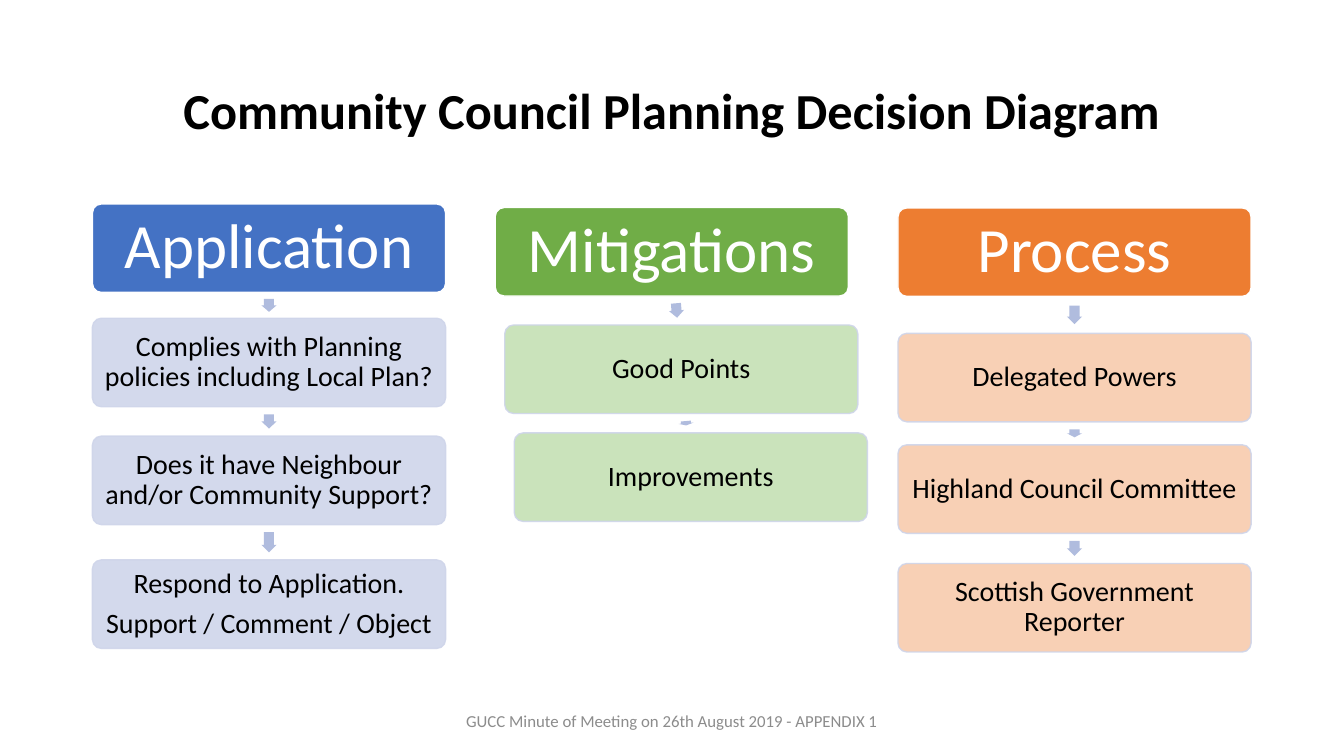
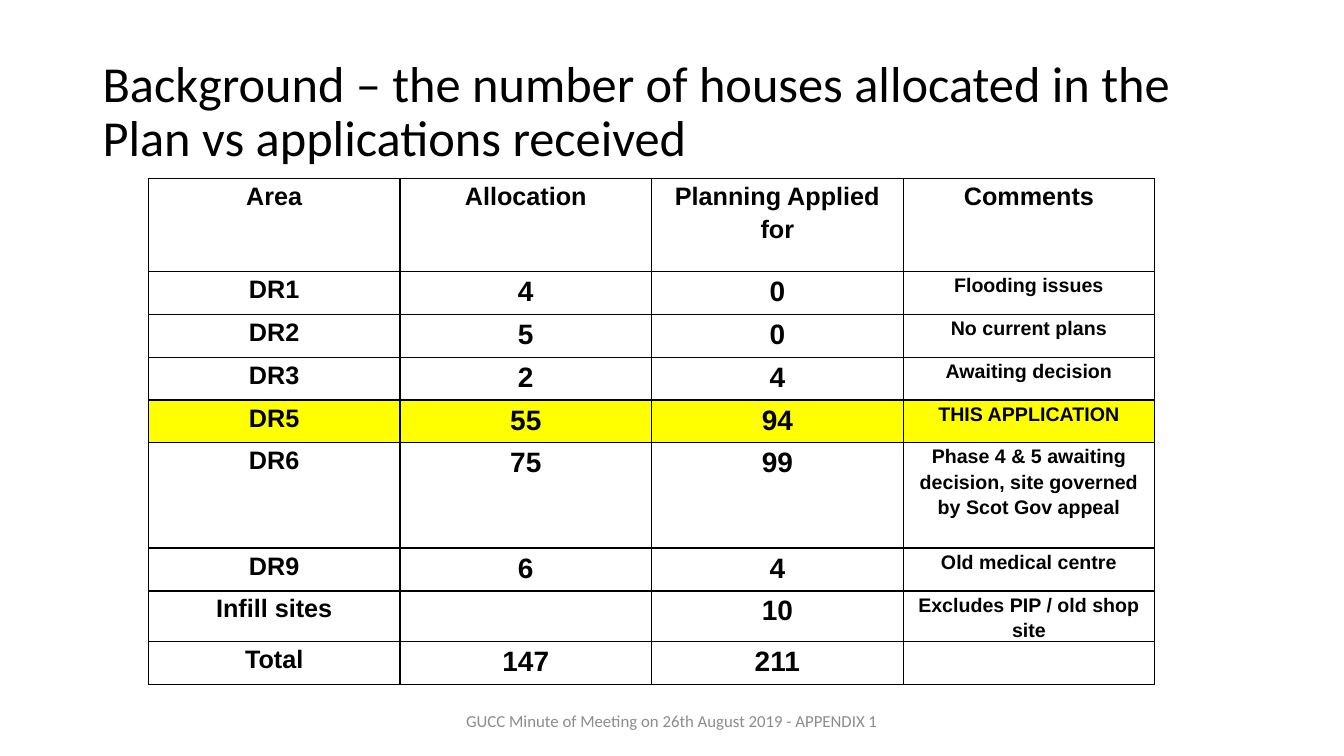
import math
from dataclasses import dataclass
from itertools import pairwise

from lxml import etree
from pptx import Presentation
from pptx import util as u
from pptx.dml import color
from pptx.enum import shapes, text
from pptx.oxml import ns


@dataclass(frozen=True)
class Theme:
    body_font: str = "Calibri"
    table_font: str = "Arial"
    ink: str = "000000"
    paper: str = "FFFFFF"
    footer_ink: str = "8C8C8C"
    arrow: str = "B0BCDE"
    step_line: str = "CFD5EA"
    highlight: str = "FFFF00"
    blue: tuple = ("4472C4", "CFD5EA")
    green: tuple = ("70AD47", "C5E0B4")
    orange: tuple = ("ED7D31", "F8CBAD")
    title_size: int = 36
    header_size: int = 45
    step_size: int = 20
    footer_size: int = 12
    table_sizes: tuple = (18, 20, 20, 14)


FOOTER = "GUCC Minute of Meeting on 26th August 2019 - APPENDIX 1"
BOX_WIDTH, BOX_HEIGHT = 8.9, 2.23
ARROW_WIDTH, ARROW_CLEARANCE = 0.38, 0.38


class Deck:
    def __init__(self, theme):
        self.theme = theme
        self.presentation = Presentation()
        self.presentation.slide_width = u.Cm(33.87)
        self.presentation.slide_height = u.Cm(19.05)
        self.slide = None

    def new_slide(self, title, bold=False, align=text.PP_ALIGN.LEFT):
        layout = self.presentation.slide_layouts.get_by_name("Title Only")
        self.slide = self.presentation.slides.add_slide(layout)
        shape = self.slide.shapes.title
        shape.left, shape.top = u.Cm(2.33), u.Cm(1.01)
        shape.width, shape.height = u.Cm(29.21), u.Cm(3.68)
        self.set_text(shape.text_frame, title, self.theme.title_size,
                      bold=bold, align=align, spacing=0.9)
        self.footer()

    def set_text(self, frame, content, size, ink=None, bold=False,
                 align=text.PP_ALIGN.CENTER, spacing=1.0):
        frame.text = content
        frame.word_wrap = True
        frame.auto_size = text.MSO_AUTO_SIZE.NONE
        frame.vertical_anchor = text.MSO_ANCHOR.MIDDLE
        self.style_text(frame, size, ink or self.theme.ink, self.theme.body_font,
                        bold, align, spacing)

    def style_text(self, frame, size, ink, font, bold, align, spacing):
        for index, paragraph in enumerate(frame.paragraphs):
            paragraph.alignment = align
            paragraph.line_spacing = spacing
            paragraph.space_before = u.Pt(0.35 * size if index else 0)
            for run in paragraph.runs:
                run.font.name = font
                run.font.size = u.Pt(size)
                run.font.bold = bold
                run.font.color.rgb = color.RGBColor.from_string(ink)

    def footer(self):
        shape = self.slide.shapes.add_textbox(
            u.Cm(11.22), u.Cm(17.66), u.Cm(11.43), u.Cm(1.01))
        self.set_text(shape.text_frame, FOOTER, self.theme.footer_size,
                      self.theme.footer_ink)

    def paint(self, fill, value):
        fill.solid()
        fill.fore_color.rgb = color.RGBColor.from_string(value)

    def box(self, left, top, content, size, fill, line, ink, inset, opacity=100):
        shape = self.slide.shapes.add_shape(
            shapes.MSO_SHAPE.ROUNDED_RECTANGLE,
            u.Cm(left), u.Cm(top), u.Cm(BOX_WIDTH), u.Cm(BOX_HEIGHT))
        shape.adjustments[0] = 0.1
        shape.shadow.inherit = False
        self.paint(shape.fill, fill)
        self.paint(shape.line.fill, line)
        shape.line.width = u.Pt(1)
        if opacity < 100:
            for tint in shape.element.spPr.iter(ns.qn("a:srgbClr")):
                etree.SubElement(tint, ns.qn("a:alpha"), val=str(opacity * 1000))
        frame = shape.text_frame
        frame.margin_left = frame.margin_right = u.Cm(inset)
        frame.margin_top = frame.margin_bottom = u.Cm(inset)
        self.set_text(frame, content, size, ink, spacing=0.9)

    def arrow(self, start, end, length):
        (start_left, start_top), (end_left, end_top) = start, end
        center_x = (start_left + end_left + BOX_WIDTH) / 2
        center_y = (start_top + end_top + BOX_HEIGHT) / 2
        shape = self.slide.shapes.add_shape(
            shapes.MSO_SHAPE.DOWN_ARROW,
            u.Cm(center_x - ARROW_WIDTH / 2), u.Cm(center_y - length / 2),
            u.Cm(ARROW_WIDTH), u.Cm(length))
        shape.adjustments[0] = 0.667
        shape.adjustments[1] = 0.5
        shape.rotation = -math.degrees(math.atan2(end_left - start_left, end_top - start_top))
        shape.shadow.inherit = False
        self.paint(shape.fill, self.theme.arrow)
        shape.line.fill.background()

    def flow(self, left, tops, shift, palette, header, steps):
        theme = self.theme
        header_fill, step_fill = palette
        places = [(left + index * shift, top) for index, top in enumerate(tops)]
        self.box(*places[0], header, theme.header_size, header_fill,
                 theme.paper, theme.paper, 0.15)
        for place, step in zip(places[1:], steps):
            self.box(*place, step, theme.step_size, step_fill,
                     theme.step_line, theme.ink, 0.08, opacity=90)
        for index, (start, end) in enumerate(pairwise(places)):
            gap = end[1] - start[1] - BOX_HEIGHT
            self.arrow(start, end, gap - ARROW_CLEARANCE if index else gap / 2)

    def table(self, left, top, column_width, heights, rows, highlighted):
        table = self.slide.shapes.add_table(
            len(rows), len(rows[0]), u.Cm(left), u.Cm(top),
            u.Cm(column_width * len(rows[0])), u.Cm(sum(heights))).table
        table.first_row = table.horz_banding = False
        for column in table.columns:
            column.width = u.Cm(column_width)
        for row_index, (row, height) in enumerate(zip(rows, heights)):
            table.rows[row_index].height = u.Cm(height)
            for column_index, content in enumerate(row):
                size = self.theme.table_sizes[column_index if row_index else 0]
                self.cell(table.cell(row_index, column_index), content, size,
                          row[0] == highlighted)

    def cell(self, cell, content, size, highlighted):
        cell.text_frame.text = content
        cell.margin_left = cell.margin_right = u.Cm(0.18)
        cell.margin_top = cell.margin_bottom = 0
        self.style_text(cell.text_frame, size, self.theme.ink, self.theme.table_font,
                        True, text.PP_ALIGN.CENTER, 1.15)
        properties = cell._tc.get_or_add_tcPr()
        for side in ("lnL", "lnR", "lnT", "lnB"):
            line = etree.SubElement(properties, ns.qn("a:" + side), w=str(u.Pt(1)))
            fill = etree.SubElement(line, ns.qn("a:solidFill"))
            etree.SubElement(fill, ns.qn("a:srgbClr"), val=self.theme.ink)
        if highlighted:
            self.paint(cell.fill, self.theme.highlight)
        else:
            cell.fill.background()


def decision_diagram(deck):
    theme = deck.theme
    deck.new_slide("Community Council Planning Decision Diagram",
                   bold=True, align=text.PP_ALIGN.CENTER)
    deck.flow(22.63, (5.24, 8.4, 11.21, 14.2), 0, theme.orange, "Process",
              ("Delegated Powers", "Highland Council Committee",
               "Scottish Government Reporter"))
    deck.flow(2.33, (5.14, 8.02, 10.99, 14.11), 0, theme.blue, "Application",
              ("Complies with Planning policies including Local Plan?",
               "Does it have Neighbour and/or Community Support?",
               "Respond to Application.\nSupport / Comment / Object"))
    deck.flow(12.48, (5.23, 8.19, 10.91), 0.24, theme.green, "Mitigations",
              ("Good Points", "Improvements"))


def housing_background(deck):
    deck.new_slide("Background – the number of houses allocated in the Plan "
                   "vs applications received")
    rows = (
        ("Area", "Allocation", "Planning Applied for", "Comments"),
        ("DR1", "4", "0", "Flooding issues"),
        ("DR2", "5", "0", "No current plans"),
        ("DR3", "2", "4", "Awaiting decision"),
        ("DR5", "55", "94", "THIS APPLICATION"),
        ("DR6", "75", "99", "Phase 4 & 5 awaiting decision, site governed by Scot Gov appeal"),
        ("DR9", "6", "4", "Old medical centre"),
        ("Infill sites", "", "10", "Excludes PIP / old shop site"),
        ("Total", "147", "211", ""),
    )
    tall_rows = {"Area": 2.34, "DR6": 2.65}
    heights = [tall_rows.get(row[0], 1.08) for row in rows]
    deck.table(3.74, 4.5, 6.34, heights, rows, highlighted="DR5")


def main():
    deck = Deck(Theme())
    decision_diagram(deck)
    housing_background(deck)
    deck.presentation.save("out.pptx")


if __name__ == "__main__":
    main()
